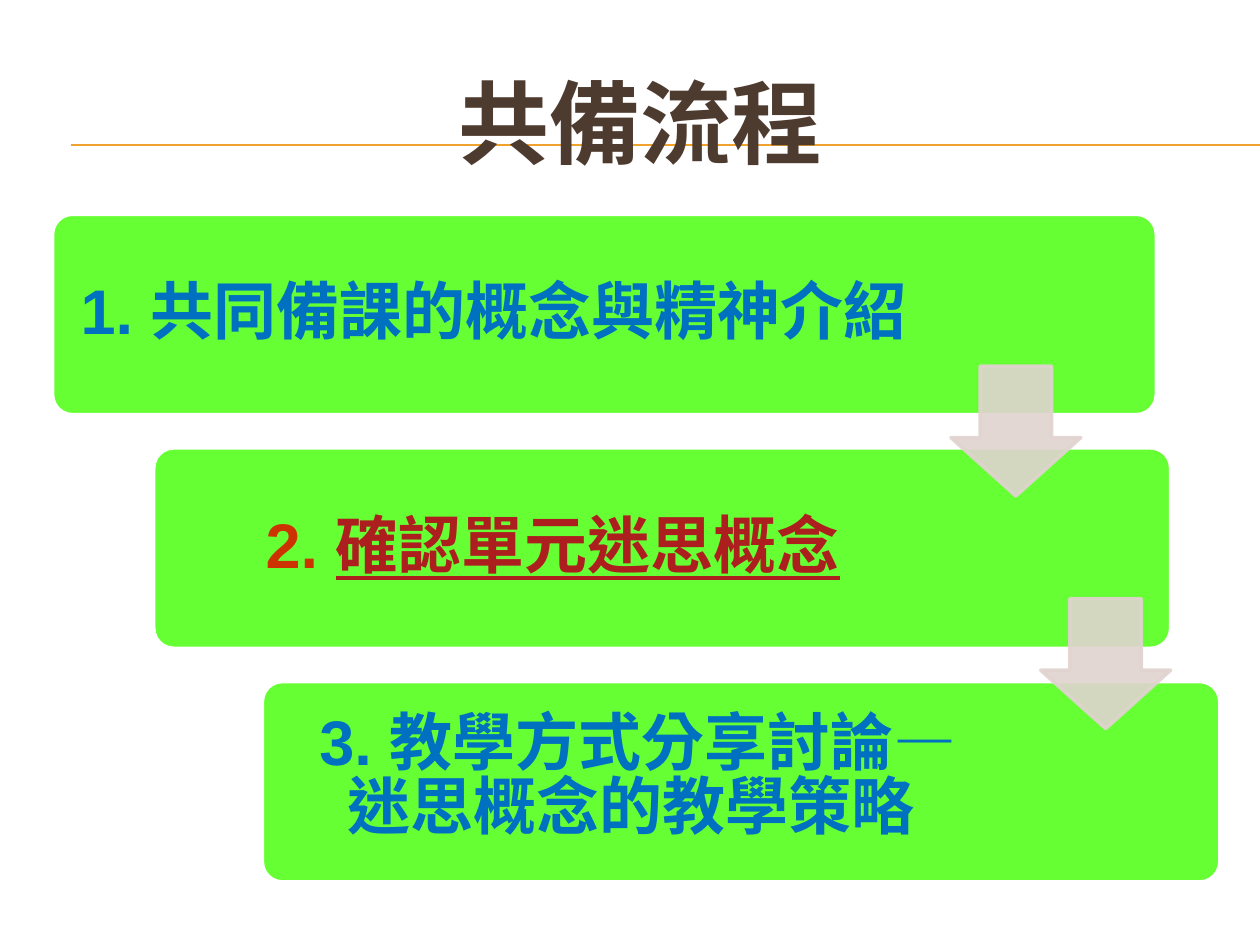
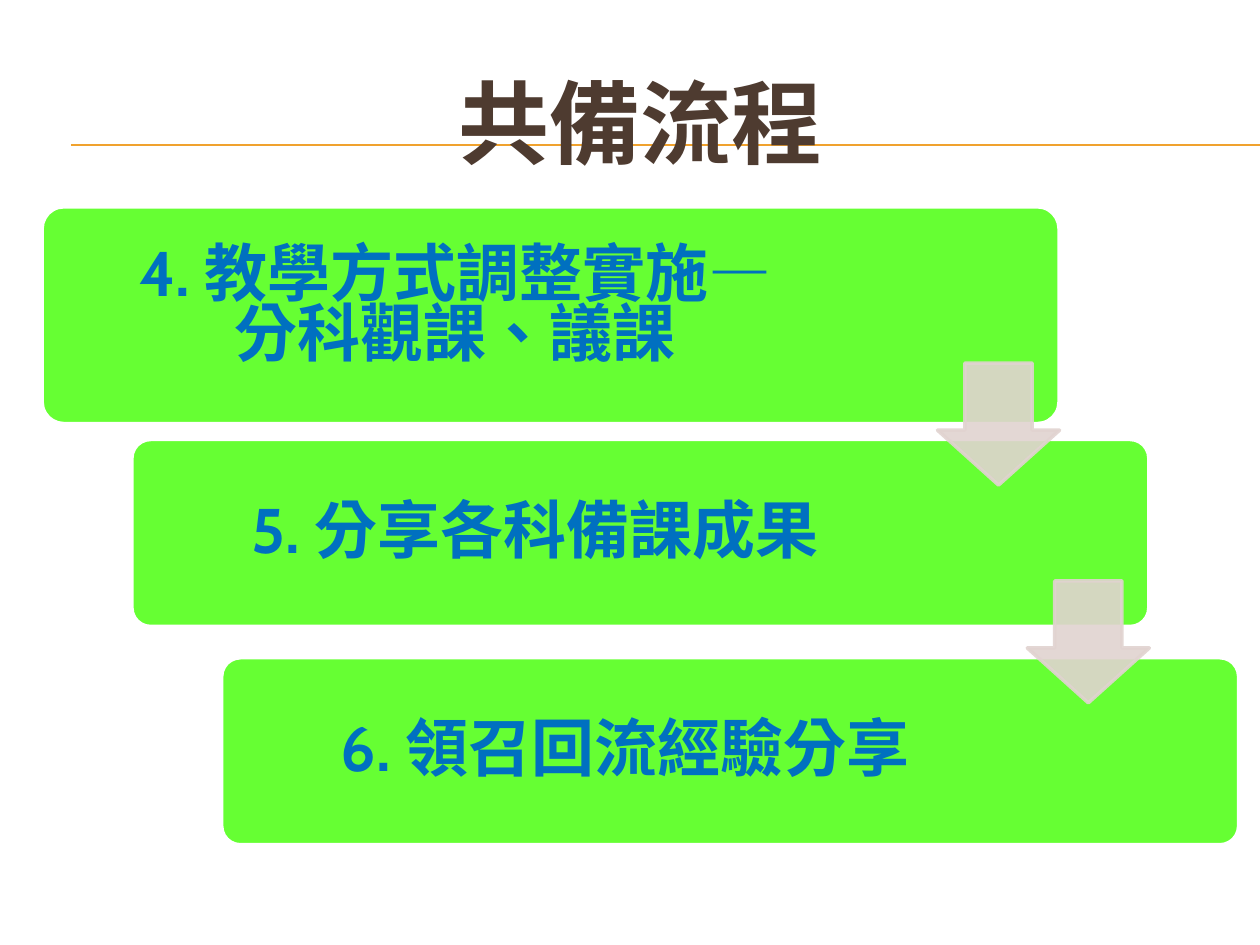
from lxml import etree
from pptx import Presentation
from pptx.dml.color import RGBColor
from pptx.enum.shapes import MSO_CONNECTOR as CONN, MSO_SHAPE as SHAPE
from pptx.enum.text import MSO_ANCHOR as ANCHOR, PP_ALIGN as ALIGN
from pptx.oxml.ns import qn
from pptx.util import Cm, Pt

GOLD = RGBColor(0xF0, 0xA2, 0x2E)
BROWN = RGBColor(0x4E, 0x3B, 0x30)
GREEN = RGBColor(0x66, 0xFF, 0x33)
WHITE = RGBColor(0xFF, 0xFF, 0xFF)
BLUE = RGBColor(0x00, 0x70, 0xC0)
ORANGE = RGBColor(0xCC, 0x33, 0x00)
RED = RGBColor(0xAD, 0x1F, 0x1F)
PINK = RGBColor(0xE1, 0xD3, 0xD0)
CJK = "Noto Sans CJK SC"
INSET = Cm(0.38)


def add_text(s, box, lines, spacing=None, after=None, inset=None):
    """Centred text box; each line is a list of (text, format) runs."""
    tf = s.shapes.add_textbox(*map(Cm, box)).text_frame
    tf.word_wrap = True
    tf.vertical_anchor = ANCHOR.MIDDLE
    if inset is not None:
        for side in ("left", "top", "right", "bottom"):
            setattr(tf, f"margin_{side}", inset)
    for i, runs in enumerate(lines):
        p = tf.paragraphs[0] if i == 0 else tf.add_paragraph()
        p.alignment, p.line_spacing, p.space_after = ALIGN.CENTER, spacing, after
        for text, fmt in runs:
            r = p.add_run()
            r.text = text
            r.font.bold = True
            for name, value in fmt.items():
                if name == "color":
                    r.font.color.rgb = value
                else:
                    setattr(r.font, name, value)
            rPr = r._r.get_or_add_rPr()
            rPr.set("lang", "zh-TW")
            etree.SubElement(rPr, qn("a:ea")).set("typeface", CJK)


def add_block(s, kind, box, color, line_color, adjustments, alpha=None):
    """Filled preset shape with a 2 pt outline."""
    sp = s.shapes.add_shape(kind, *map(Cm, box))
    sp.shadow.inherit = False
    for i, value in enumerate(adjustments):
        sp.adjustments[i] = value
    sp.fill.solid()
    sp.fill.fore_color.rgb = color
    sp.line.color.rgb = line_color
    sp.line.width = Pt(2)
    if alpha:
        for clr in sp._element.spPr.iter(qn("a:srgbClr")):
            etree.SubElement(clr, qn("a:alpha")).set("val", str(alpha * 1000))


# Steps: left, top, width, height, text width, number, lines, line spacing, space after
WIDE = (0.9, Pt(12.6))
slides = [
    {"font": "Arial", "arrow": 2.62,
     "arrows": [(19.17, 7.38), (20.98, 12.07)],
     "steps": [
         (1.06, 4.32, 22.25, 4.04, 17.78, "1. ", ["共同備課的概念與精神介紹"], *WIDE),
         (3.10, 9.03, 20.5, 4.04, 16.08, "2. ", ["確認單元迷思概念"], *WIDE),
         (5.29, 13.74, 19.3, 4.04, 15.14, "3. ",
          ["教學方式分享討論—", "迷思概念的教學策略 "], 0.7, Pt(6))]},
    {"font": "Cabin", "arrow": 2.46,
     "arrows": [(18.9, 7.32), (20.71, 11.71)],
     "steps": [
         (0.85, 4.17, 20.5, 4.37, 16.66, "4. ",
          ["教學方式調整實施—", "分科觀課、議課"], 0.5, Pt(12.6)),
         (2.66, 8.86, 20.5, 3.77, 16.26, "5. ", ["分享各科備課成果"], *WIDE),
         (4.47, 13.26, 20.5, 3.77, 16.26, "6. ", ["領召回流經驗分享"], *WIDE)]},
]
# The second step stands out from the others
emphasis = {"2. ": ({"color": ORANGE}, {"color": RED, "underline": True})}
plain = ({"color": BLUE}, {"color": BLUE})

prs = Presentation()
prs.slide_width, prs.slide_height = Cm(25.4), Cm(19.05)

for flow in slides:
    s = prs.slides.add_slide(prs.slide_layouts[6])

    # Double rule behind the title
    for y in (2.92, 2.94):
        rule = s.shapes.add_connector(CONN.STRAIGHT, Cm(1.43), Cm(y), Cm(25.4), Cm(y))
        rule.line.color.rgb = GOLD
        rule.line.width = Pt(0.75)
        etree.SubElement(rule._element.spPr, qn("a:effectLst"))

    # Title
    title = {"size": Pt(52), "name": CJK, "color": BROWN}
    add_text(s, (0.85, 1.27, 24.13, 2.34), [[("共備流程", title)]])

    # Step cards
    base = {"size": Pt(36), "name": flow["font"]}
    for x, y, w, h, text_w, number, lines, spacing, after in flow["steps"]:
        add_block(s, SHAPE.ROUNDED_RECTANGLE, (x, y, w, h), GREEN, WHITE, [0.1])
        number_fmt, body_fmt = ({**base, **f} for f in emphasis.get(number, plain))
        rows = [[(line, body_fmt)] for line in lines]
        rows[0].insert(0, (number, number_fmt))
        add_text(s, (x, y, text_w, h), rows, spacing, after, INSET)

    # Arrows between the steps
    for x, y in flow["arrows"]:
        box = (x, y, flow["arrow"], flow["arrow"])
        add_block(s, SHAPE.DOWN_ARROW, box, PINK, PINK, [0.55, 0.45], alpha=90)

prs.save("out.pptx")
